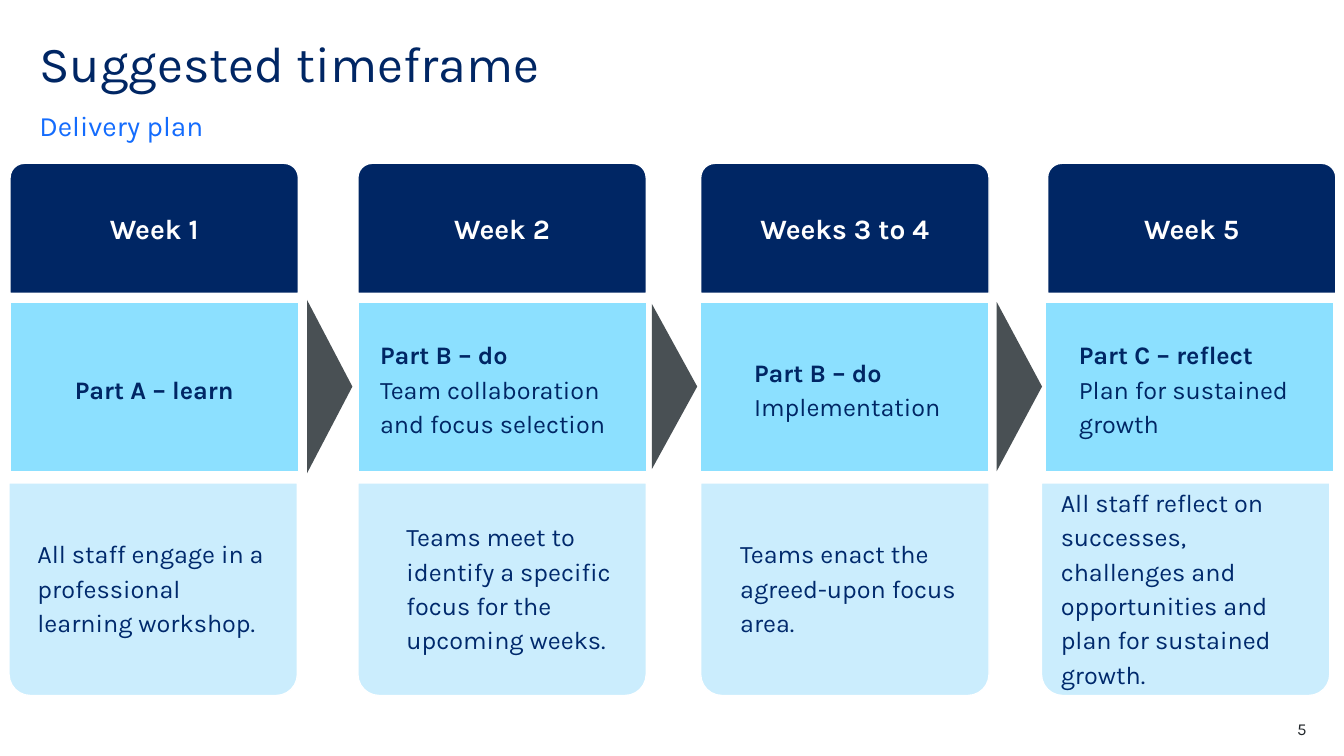
"""Build the slide that shows the suggested timeframe, week by week."""
import pptx
import pptx.util
import pptx.dml.color
import pptx.enum.shapes
import pptx.enum.text

Inches = pptx.util.Inches
Pt = pptx.util.Pt
RGBColor = pptx.dml.color.RGBColor
SHAPE = pptx.enum.shapes.MSO_SHAPE
ALIGN = pptx.enum.text.PP_ALIGN
ANCHOR = pptx.enum.text.MSO_ANCHOR

FONT = "Karla"
NAVY = RGBColor(0x00, 0x26, 0x64)
INK = RGBColor(0x00, 0x29, 0x6C)
BLUE = RGBColor(0x14, 0x6C, 0xFD)
SKY = RGBColor(0x8C, 0xE0, 0xFF)
PALE = RGBColor(0xCB, 0xED, 0xFD)
GREY = RGBColor(0x49, 0x50, 0x54)
DARK = RGBColor(0x22, 0x27, 0x2B)
WHITE = RGBColor(0xFF, 0xFF, 0xFF)

WIDTH = 2.86
WEEKS = [
    ("Week 1", (0.1, 0.1, 0.09), "Part A – learn", None,
     "All staff engage in a professional learning workshop.", 0.09),
    ("Week 2", (3.55, 3.55, 3.55), "Part B – do\nTeam collaboration and focus selection", 0.09,
     "Teams meet to identify a specific focus for the upcoming weeks.", 0.29),
    ("Weeks 3 to 4", (6.95, 6.95, 6.95), "Part B – do\nImplementation", 0.4,
     "Teams enact the agreed-upon focus area.", 0.2),
    ("Week 5", (10.39, 10.37, 10.33), "Part C – reflect\nPlan for sustained growth", 0.2,
     "All staff reflect on successes, challenges and opportunities "
     "and plan for sustained growth.", 0),
]
ARROWS = [1.72, 1.64, 1.68]


def write(shape, text, size, color, bold=False, align=ALIGN.LEFT, anchor=ANCHOR.TOP,
          inset=0, space=1.0, after=0, indent=0):
    """Put one paragraph in a shape; bold covers its first line only."""
    frame = shape.text_frame
    frame.word_wrap = True
    frame.auto_size = pptx.enum.text.MSO_AUTO_SIZE.NONE
    frame.vertical_anchor = anchor
    frame.margin_left = frame.margin_right = Inches(inset)
    frame.margin_top = frame.margin_bottom = Inches(inset)
    para = frame.paragraphs[0]
    para.text = text.replace("\n", "\v")
    para.alignment = align
    para.line_spacing = space
    para.space_after = Pt(after)
    if indent:
        props = para._p.get_or_add_pPr()
        props.set("marL", str(Inches(indent)))
        props.set("indent", "0")
    for count, run in enumerate(para.runs):
        font = run.font
        font.name, font.size, font.bold = FONT, Pt(size), bold and count == 0
        font.color.rgb = color


def add_text(slide, left, top, width, height, *args, **style):
    """Add a text box."""
    box = slide.shapes.add_textbox(Inches(left), Inches(top), Inches(width), Inches(height))
    write(box, *args, **style)


def add_block(slide, kind, left, top, width, height, fill, line=None):
    """Add a filled preset shape, with a thin edge if a line colour is given."""
    block = slide.shapes.add_shape(
        kind, Inches(left), Inches(top), Inches(width), Inches(height))
    block.shadow.inherit = False
    block.fill.solid()
    block.fill.fore_color.rgb = fill
    if line is None:
        block.line.fill.background()
    else:
        block.line.color.rgb = line
        block.line.width = Pt(1)
    return block


def add_week(slide, name, lefts, part, part_in, task, task_in):
    """Add one column: header, part and task."""
    head = add_block(slide, SHAPE.ROUND_2_SAME_RECTANGLE, lefts[0], 1.62, WIDTH, 1.29, NAVY, WHITE)
    head.adjustments[0] = 0.11
    write(head, name, 20, WHITE, True, ALIGN.CENTER, ANCHOR.MIDDLE, 0.17, 0.9)

    body = add_block(slide, SHAPE.RECTANGLE, lefts[1], 3, WIDTH, 1.68, SKY, WHITE)
    align = ALIGN.CENTER if part_in is None else ALIGN.LEFT
    write(body, part, 18, NAVY, True, align, ANCHOR.MIDDLE, 0.13, 1.14, 12, part_in)

    foot = add_block(slide, SHAPE.ROUND_2_SAME_RECTANGLE, lefts[2], 4.79, WIDTH, 2.11, PALE, WHITE)
    foot.adjustments[0], foot.adjustments[1] = 0, 0.1
    write(foot, task, 18, INK, False, ALIGN.LEFT, ANCHOR.MIDDLE, 0.13, 1.14, 12, task_in)


def add_arrow(slide, index, length):
    """Add the triangle that points from one week to the next."""
    center = 3.27 + 3.42 * index
    arrow = add_block(slide, SHAPE.ISOSCELES_TRIANGLE, center - length / 2, 3.61,
                      length, 0.45, GREY)
    arrow.rotation = 90


def main():
    """Build and save the slide."""
    deck = pptx.Presentation()
    deck.slide_width, deck.slide_height = Inches(13.33), Inches(7.5)
    slide = deck.slides.add_slide(deck.slide_layouts.get_by_name("Title Only"))

    title = slide.shapes.title
    title.left, title.top = Inches(0.39), Inches(0.39)
    title.width, title.height = Inches(11.02), Inches(0.6)
    write(title, "Suggested timeframe", 36, NAVY, space=0.9)
    add_text(slide, 0.39, 1.07, 11.02, 0.34, "Delivery plan", 20, BLUE,
             anchor=ANCHOR.BOTTOM, space=1.5, after=12)

    for week in WEEKS:
        add_week(slide, *week)
    for index, length in enumerate(ARROWS):
        add_arrow(slide, index, length)
    add_text(slide, 12.17, 7.13, 0.79, 0.2, "5", 12, DARK, align=ALIGN.RIGHT)
    deck.save("out.pptx")


if __name__ == "__main__":
    main()
